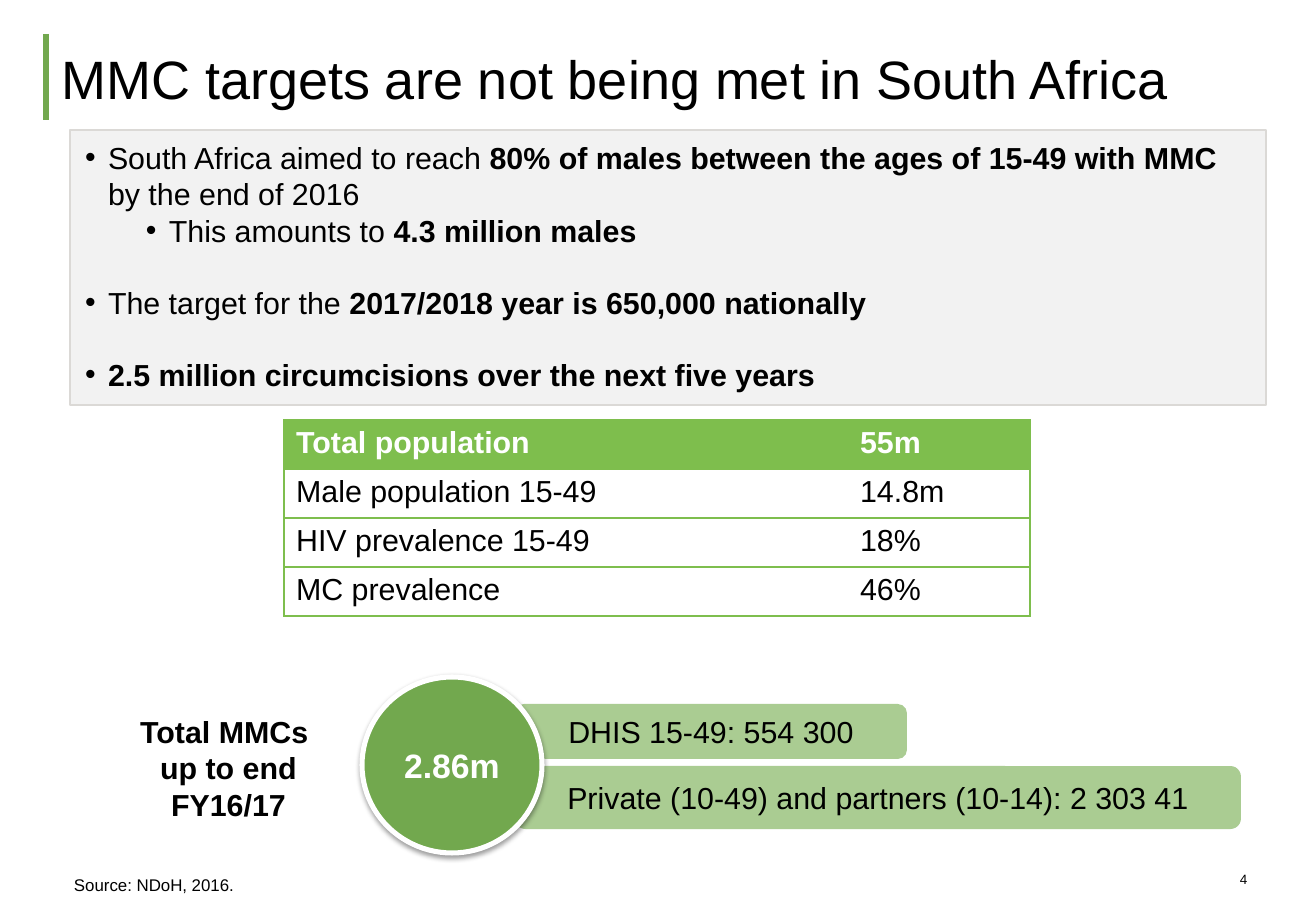
"""Build the slide on MMC targets in South Africa."""
import pptx
import pptx.chart.data
import pptx.dml.color
import pptx.enum.shapes
import pptx.enum.text
import pptx.oxml
import pptx.oxml.ns
import pptx.util
from lxml import etree

PX = 7526
ALIGN = pptx.enum.text.PP_ALIGN
ANCHOR = pptx.enum.text.MSO_ANCHOR
SHAPE = pptx.enum.shapes.MSO_SHAPE
RGB = pptx.dml.color.RGBColor.from_string
THEME = {
    "font": "Arial", "black": RGB("000000"), "white": RGB("FFFFFF"),
    "green": RGB("72A84E"), "pale_green": RGB("AACC92"), "table_green": RGB("7EBE4D"),
    "panel": RGB("F2F2F2"), "panel_line": RGB("DBD9D6"),
    "title": 32, "total": 20, "text": 18, "source": 10, "number": 8,
}


def place(shape, left, top, width, height):
    """Move and size a shape in px."""
    shape.left, shape.top = left * PX, top * PX
    shape.width, shape.height = width * PX, height * PX


def style(para, size="text", color="black", bold=None, align=ALIGN.LEFT):
    """Format a whole paragraph from the theme."""
    para.alignment = align
    para.font.name = THEME["font"]
    para.font.size = pptx.util.Pt(THEME[size])
    para.font.color.rgb = THEME[color]
    para.font.bold = bold


deck = pptx.Presentation()
deck.slide_width, deck.slide_height = 1316 * PX, 911 * PX
page = deck.slides.add_slide(deck.slide_layouts[1])
shapes = page.shapes

accent = shapes.add_connector(
    pptx.enum.shapes.MSO_CONNECTOR.STRAIGHT, 46 * PX, 34 * PX, 46 * PX, 120 * PX)
accent.line.color.rgb = THEME["green"]
accent.line.width = pptx.util.Pt(3)
etree.SubElement(accent._element.spPr, pptx.oxml.ns.qn("a:effectLst"))

title = shapes.title
place(title, 49, 35, 1221, 85)
title.text_frame.text = "MMC targets are not being met in South Africa"
title.text_frame.auto_size = pptx.enum.text.MSO_AUTO_SIZE.NONE
title.text_frame.vertical_anchor = ANCHOR.MIDDLE
style(title.text_frame.paragraphs[0], "title")

targets = [
    (0, 0, [("South Africa aimed to reach ", False),
            ("80% of males between the ages of 15-49 with MMC ", True),
            ("by the end of 2016", False)]),
    (1, 0, [("This amounts to ", False), ("4.3 million males", True)]),
    (0, 21, [("The target for the ", False),
             ("2017/2018 year is 650,000 nationally", True)]),
    (0, 21, [("2.5 million circumcisions over the next five years", True)]),
]
panel = page.placeholders[1]
place(panel, 70, 130, 1196, 275)
panel.fill.solid()
panel.fill.fore_color.rgb = THEME["panel"]
panel.line.color.rgb = THEME["panel_line"]
panel.line.width = pptx.util.Pt(0.75)
frame = panel.text_frame
frame.auto_size = pptx.enum.text.MSO_AUTO_SIZE.NONE
frame.vertical_anchor = ANCHOR.TOP
frame.margin_left = frame.margin_right = 15 * PX
frame.margin_top = frame.margin_bottom = 9 * PX
for index, (level, gap, pieces) in enumerate(targets):
    para = frame.add_paragraph() if index else frame.paragraphs[0]
    para.level = level
    para.space_before = pptx.util.Pt(gap)
    properties = para._p.get_or_add_pPr()
    properties.set("marL", str((23 + 61 * level) * PX))
    properties.set("indent", str(-23 * PX))
    etree.SubElement(properties, pptx.oxml.ns.qn("a:buChar"), char="•")
    style(para)
    for words, bold in pieces:
        span = para.add_run()
        span.text = words
        span.font.bold = bold

figures = [("Total population", "55m"), ("Male population 15-49", "14.8m"),
           ("HIV prevalence 15-49", "18%"), ("MC prevalence", "46%")]
table = shapes.add_table(4, 2, 284 * PX, 420 * PX, 746 * PX, 196 * PX).table
table.horz_banding = False
table.columns[0].width, table.columns[1].width = 564 * PX, 182 * PX
for row, values in enumerate(figures):
    table.rows[row].height = 49 * PX
    for column, value in enumerate(values):
        cell = table.cell(row, column)
        cell.text = value
        style(cell.text_frame.paragraphs[0], color="black" if row else "white", bold=row == 0)
        hidden = "R" if column == 0 else "L"
        for side in "LRTB":
            paint = ("<a:noFill/>" if side == hidden else
                     f'<a:solidFill><a:srgbClr val="{THEME["table_green"]}"/></a:solidFill>')
            cell._tc.get_or_add_tcPr().append(pptx.oxml.parse_xml(
                f'<a:ln{side} {pptx.oxml.ns.nsdecls("a")} w="12700">{paint}</a:ln{side}>'))
        cell.fill.solid()
        cell.fill.fore_color.rgb = THEME["white" if row else "table_green"]

blocks = [
    (SHAPE.ROUNDED_RECTANGLE, (515, 766, 726, 63), "pale_green",
     "Private (10-49) and partners (10-14): 2 303 41", "text", "black", False),
    (SHAPE.ROUNDED_RECTANGLE, (515, 704, 392, 55), "pale_green",
     "DHIS 15-49: 554 300", "text", "black", False),
    (SHAPE.OVAL, (362, 677, 180, 176), "green", "2.86m", "total", "white", True),
]
for kind, area, fill, words, size, color, bold in blocks:
    block = shapes.add_shape(kind, *[length * PX for length in area])
    block.shadow.inherit = False
    block.fill.solid()
    block.fill.fore_color.rgb = THEME[fill]
    block.line.fill.background()
    block.text_frame.text = words
    block.text_frame.vertical_anchor = ANCHOR.MIDDLE
    style(block.text_frame.paragraphs[0], size, color, bold, ALIGN.CENTER)

total = block
total.line.color.rgb = THEME["white"]
total.line.width = pptx.util.Pt(3)
total._element.spPr.find(pptx.oxml.ns.qn("a:effectLst")).append(pptx.oxml.parse_xml(
    f'<a:outerShdw {pptx.oxml.ns.nsdecls("a")} blurRad="39400" dist="20300" dir="5400000" '
    f'rotWithShape="0"><a:srgbClr val="{THEME["black"]}"><a:alpha val="38000"/></a:srgbClr>'
    '</a:outerShdw>'))

labels = [
    ((95, 707, 267, 123), ["Total MMCs ", "up to end FY16/17"], "text", True,
     ALIGN.CENTER, ANCHOR.TOP, (12, 6)),
    ((74, 873, 933, 22), ["Source: NDoH, 2016."], "source", False,
     ALIGN.LEFT, ANCHOR.BOTTOM, (0, 0)),
    ((1240, 871, 70, 16), ["4"], "number", False, ALIGN.LEFT, ANCHOR.BOTTOM, (0, 0)),
]
for area, lines, size, bold, align, anchor, (side, edge) in labels:
    box = shapes.add_textbox(*[length * PX for length in area])
    frame = box.text_frame
    frame.word_wrap = True
    frame.vertical_anchor = anchor
    frame.margin_left = frame.margin_right = side * PX
    frame.margin_top = frame.margin_bottom = edge * PX
    frame.text = "\n".join(lines)
    for para in frame.paragraphs:
        style(para, size, bold=bold, align=align)

deck.save("out.pptx")
